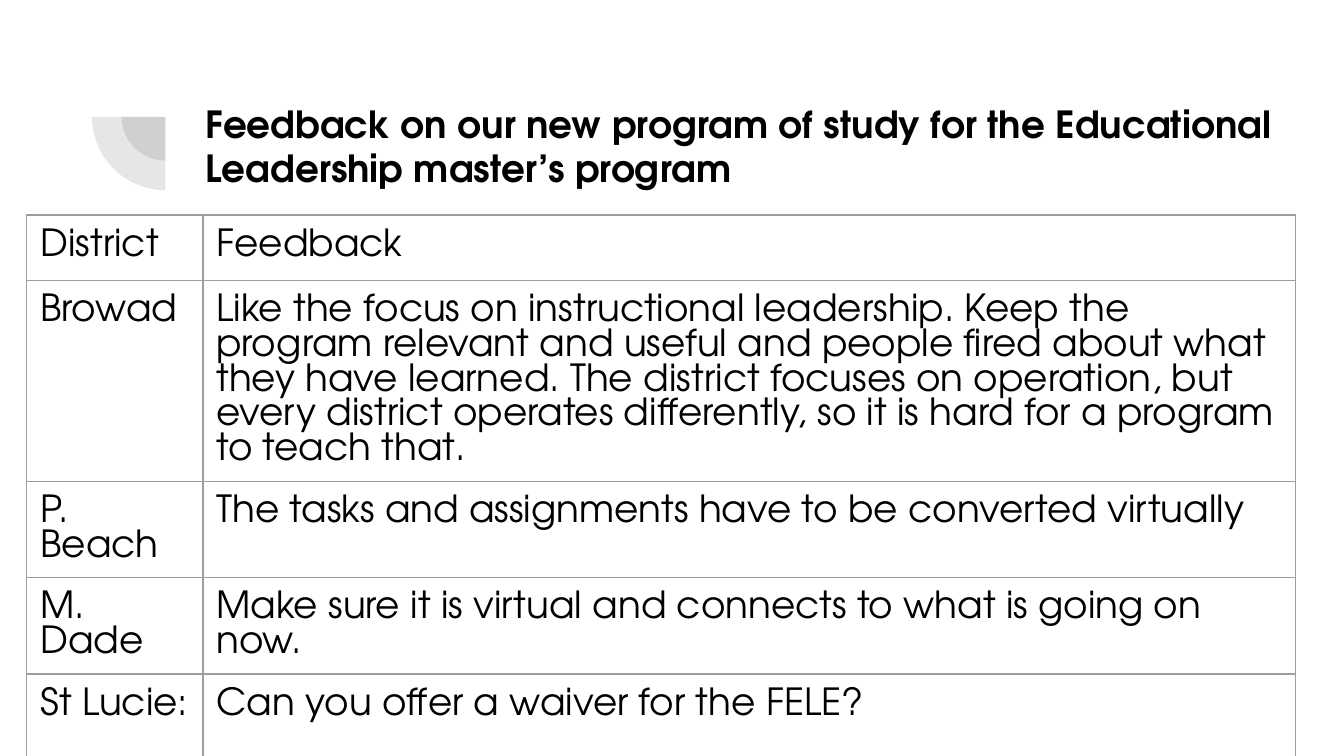
from dataclasses import dataclass

from lxml.etree import SubElement
from pptx import Presentation
from pptx.dml.color import RGBColor as RGB
from pptx.enum.shapes import MSO_SHAPE as Kind
from pptx.enum.text import MSO_ANCHOR as Anchor
from pptx.oxml.ns import qn
from pptx.util import Inches, Pt


@dataclass(frozen=True)
class Theme:
    font: str = "TeX Gyre Adventor"
    size: float = 20
    lead: float = 18.6
    ink: str = "000000"
    rule: str = "9E9E9E"
    thin: float = 0.75
    pie: str = "424242"
    alpha: int = 13
    pad: float = 0.1


@dataclass(frozen=True)
class Row:
    name: str
    note: str
    high: float


THEME = Theme()
WIDE = 10
COLS = (1.31, 8.13)
ROWS = (
    Row("District", "Feedback", 0.49),
    Row("Browad", "Like the focus on instructional leadership. Keep the "
        "program relevant and useful and people fired about what they have "
        "learned. The district focuses on operation, but every district "
        "operates differently, so it is hard for a program to teach that.", 1.41),
    Row("P. Beach", "The tasks and assignments have to be converted virtually", 0.49),
    Row("M. Dade", "Make sure it is virtual and connects to what is going on now.", 0.57),
    Row("St Lucie:", "Can you offer a waiver for the FELE?", 0.82),
)


def add_run(para, text: str, bold: bool = False) -> None:
    run = para.add_run()
    run.text = text
    font = run.font
    font.name, font.size, font.bold = THEME.font, Pt(THEME.size), bold
    font.color.rgb = RGB.from_string(THEME.ink)


def set_pad(box) -> None:
    """Give a text frame or a cell equal margins."""
    box.margin_left = box.margin_right = Inches(THEME.pad)
    box.margin_top = box.margin_bottom = Inches(THEME.pad)
    box.vertical_anchor = Anchor.TOP


def add_pie(slide, mid: tuple[float, float], size: float) -> None:
    x, y = (c - size / 2 for c in mid)
    pie = slide.shapes.add_shape(
        Kind.PIE, Inches(x), Inches(y), Inches(size), Inches(size))
    pie.adjustments[0], pie.adjustments[1] = 108, 162
    pie.rotation = 270
    pie.shadow.inherit = False
    pie.line.fill.background()
    pie.fill.solid()
    pie.fill.fore_color.rgb = RGB.from_string(THEME.pie)
    tint = pie.element.spPr.find(f".//{qn('a:srgbClr')}")
    SubElement(tint, qn("a:alpha"), val=str(THEME.alpha * 1000))


def add_title(slide, text: str) -> None:
    box = slide.shapes.add_textbox(
        Inches(1.43), Inches(0.65), Inches(8.21), Inches(0.83))
    frame = box.text_frame
    frame.word_wrap = True
    set_pad(frame)
    add_run(frame.paragraphs[0], text, bold=True)


def add_rules(cell) -> None:
    """Draw a thin line on each side of a cell."""
    props = cell._tc.get_or_add_tcPr()
    for spot, side in enumerate(("lnL", "lnR", "lnT", "lnB")):
        line = SubElement(props, qn(f"a:{side}"), w=str(Pt(THEME.thin)))
        fill = SubElement(line, qn("a:solidFill"))
        SubElement(fill, qn("a:srgbClr"), val=THEME.rule)
        props.insert(spot, line)


def fill_cell(cell, text: str) -> None:
    set_pad(cell)
    cell.fill.background()
    add_rules(cell)
    para = cell.text_frame.paragraphs[0]
    para.line_spacing = Pt(THEME.lead)
    add_run(para, text)


def add_grid(slide, rows: tuple[Row, ...]) -> None:
    high = sum(row.high for row in rows)
    grid = slide.shapes.add_table(
        len(rows), len(COLS), Inches(0.2), Inches(1.6),
        Inches(sum(COLS)), Inches(high)).table
    grid.first_row = grid.horz_banding = False
    for col, wide in zip(grid.columns, COLS):
        col.width = Inches(wide)
    for line, row in zip(grid.rows, rows):
        line.height = Inches(row.high)
        for cell, text in zip(line.cells, (row.name, row.note)):
            fill_cell(cell, text)


def main() -> None:
    # Widescreen page, 16 to 9
    deck = Presentation()
    deck.slide_width, deck.slide_height = Inches(WIDE), Inches(WIDE * 9 / 16)
    slide = deck.slides.add_slide(deck.slide_layouts[6])

    # Quarter circles beside the title
    for size in (0.65, 1.09):
        add_pie(slide, (1.23, 0.87), size)

    # Title and feedback table
    add_title(slide, "Feedback on our new program of study for the "
              "Educational Leadership master’s program")
    add_grid(slide, ROWS)
    deck.save("out.pptx")


if __name__ == "__main__":
    main()
